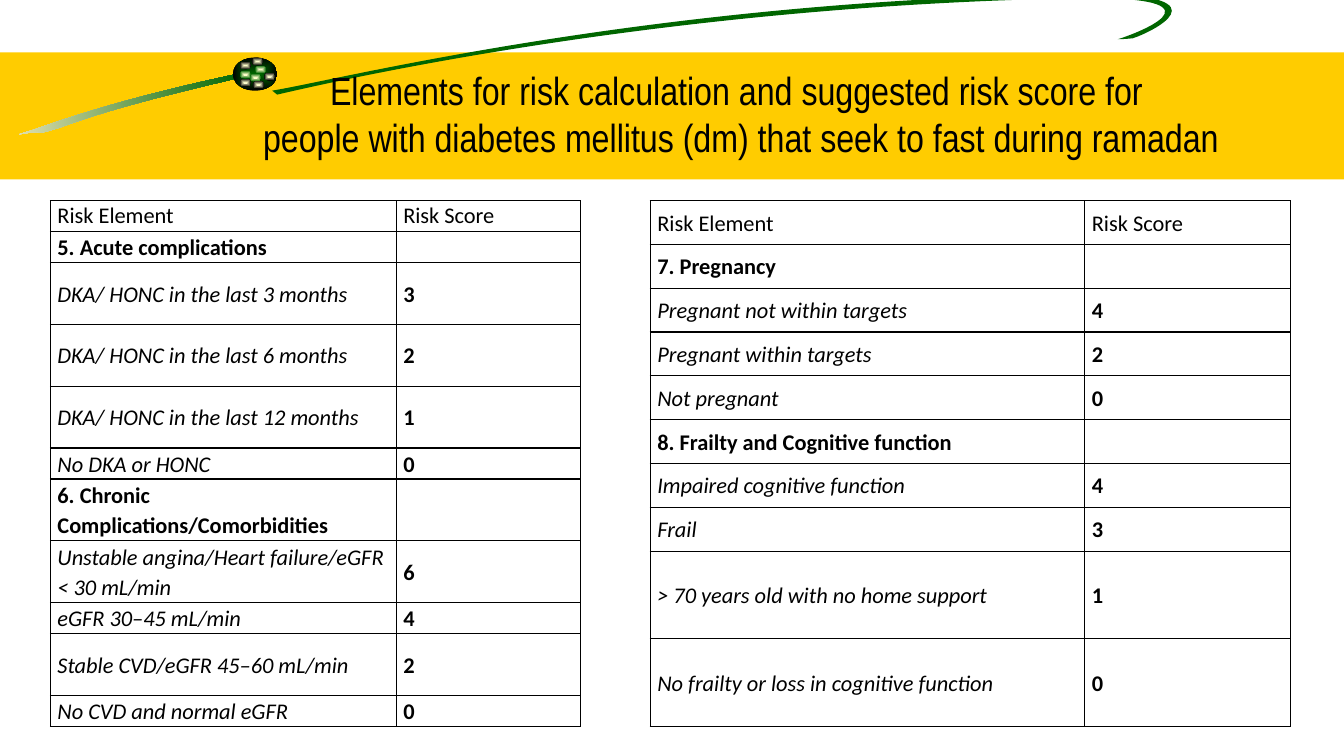
from math import cos, radians, sin

from lxml.etree import SubElement
from pptx import Presentation
from pptx.dml.color import RGBColor
from pptx.enum.shapes import MSO_SHAPE
from pptx.enum.text import MSO_ANCHOR, MSO_AUTO_SIZE, PP_ALIGN
from pptx.oxml import parse_xml
from pptx.oxml.ns import nsdecls, qn
from pptx.util import Inches, Pt

GREEN, BLACK, CREAM, WHITE = "006600", "000000", "FFFFCC", "FFFFFF"
TILT = 351.5
TABLE_TOP, TABLE_HEIGHT = 1.99, 5.22

TAIL = [(2.38, 0.73),
        (1.21, 0.98), (0.65, 1.18), (0.33, 1.29),
        (0, 1.39), (0.34, 1.29), (0.41, 1.32),
        (0.75, 1.24), (0.76, 1.15), (2.39, 0.77),
        (2.39, 0.77), (2.38, 0.73), (2.38, 0.73)]
SWOOSH = [(2.7, 0.9),
          (3.29, 0.81), (6.51, -0.02), (10.86, -0.06),
          (12.21, -0.05), (11.4, 0.33), (11.24, 0.38),
          (11.24, 0.38), (11.15, 0.39), (11.09, 0.39),
          (11.23, 0.35), (12.21, -0.01), (10.84, -0.02),
          (7.32, 0.03), (4.29, 0.58), (2.75, 0.94),
          (2.75, 0.94), (2.7, 0.9), (2.7, 0.9)]
SPOTS = [(2.53, 0.65, GREEN), (2.38, 0.61, BLACK), (2.38, 0.7, GREEN),
         (2.48, 0.73, GREEN), (2.62, 0.72, BLACK), (2.51, 0.8, BLACK),
         (2.38, 0.78, BLACK), (2.5, 0.57, BLACK)]

TITLE = ("Elements for risk calculation and suggested risk score for \v"
         "people with diabetes mellitus (dm) that seek to fast during ramadan")
HEADER = ("Risk Element", "Risk Score", 1)
COMPLICATIONS = [
    HEADER,
    ("5. Acute complications", "", 1),
    ("DKA/ HONC in the last 3 months", "3", 2),
    ("DKA/ HONC in the last 6 months", "2", 2),
    ("DKA/ HONC in the last 12 months", "1", 2),
    ("No DKA or HONC", "0", 1),
    ("6. Chronic Complications/Comorbidities", "", 2),
    ("Unstable angina/Heart failure/eGFR < 30 mL/min", "6", 2),
    ("eGFR 30–45 mL/min", "4", 1),
    ("Stable CVD/eGFR 45–60 mL/min", "2", 2),
    ("No CVD and normal eGFR", "0", 1)]
PREGNANCY_FRAILTY = [
    HEADER,
    ("7. Pregnancy", "", 1),
    ("Pregnant not within targets", "4", 1),
    ("Pregnant within targets", "2", 1),
    ("Not pregnant", "0", 1),
    ("8. Frailty and Cognitive function", "", 1),
    ("Impaired cognitive function", "4", 1),
    ("Frail", "3", 1),
    ("> 70 years old with no home support", "1", 2),
    ("No frailty or loss in cognitive function", "0", 2)]


def colour(value):
    return RGBColor.from_string(value)


def paint(shape, first, last=None, radial=False):
    shape.shadow.inherit = False
    shape.line.fill.background()
    if last is None:
        shape.fill.solid()
        shape.fill.fore_color.rgb = colour(first)
        return
    shape.fill.gradient()
    shape.fill.gradient_angle = 0
    for stop, value in zip(shape.fill.gradient_stops, (first, last)):
        stop.color.rgb = colour(value)
    if radial:
        linear = shape.element.spPr.find(".//" + qn("a:lin"))
        linear.getparent().replace(linear, parse_xml(
            f'<a:path {nsdecls("a")} path="shape"><a:fillToRect l="50000" '
            'r="50000" t="50000" b="50000"/></a:path>'))


def add_preset(page, kind, left, top, width, height, *fill, radial=False):
    shape = page.shapes.add_shape(kind, Inches(left), Inches(top),
                                  Inches(width), Inches(height))
    paint(shape, *fill, radial=radial)
    return shape


def add_side_panel(page):
    panel = add_preset(page, MSO_SHAPE.RECTANGLE, 0.99, 2.06, 1.62, 5.44, WHITE)
    solid = panel.element.spPr.find(qn("a:solidFill"))
    SubElement(solid[0], qn("a:alpha"), val="50000")


def level_point(point, center):
    across, down = point[0] - center[0], point[1] - center[1]
    angle = radians(360 - TILT)
    return (1000 * (center[0] + across * cos(angle) - down * sin(angle)),
            1000 * (center[1] + across * sin(angle) + down * cos(angle)))


def add_stroke(page, outline, center, *fill):
    start, *controls = [level_point(point, center) for point in outline]
    builder = page.shapes.build_freeform(*start, scale=Inches(0.001))
    builder.add_line_segments(controls, close=True)
    stroke = builder.convert_to_shape()
    stroke.rotation = TILT
    paint(stroke, *fill)
    lines = list(stroke.element.iter(qn("a:lnTo")))
    for index in range(0, len(lines), 3):
        curve = parse_xml(f'<a:cubicBezTo {nsdecls("a")}/>')
        lines[index].addprevious(curve)
        for line in lines[index:index + 3]:
            curve.append(line[0])
            line.getparent().remove(line)


def set_title(page, text):
    title = page.shapes.title
    title.left, title.top = Inches(1.68), Inches(0.5)
    title.width, title.height = Inches(11.33), Inches(1.25)
    frame = title.text_frame
    frame.text = text
    frame.auto_size = MSO_AUTO_SIZE.NONE
    frame.vertical_anchor = MSO_ANCHOR.MIDDLE
    para = frame.paragraphs[0]
    para.alignment = PP_ALIGN.CENTER
    style_font(para.font, "Arial Narrow", 28)
    title.element.getparent().append(title.element)


def style_font(font, name, size, bold=False, italic=False):
    font.name, font.size = name, Pt(size)
    font.bold, font.italic = bold, italic
    font.color.rgb = colour(BLACK)


def add_borders(cell):
    properties = cell._tc.get_or_add_tcPr()
    for position, side in enumerate(("lnL", "lnR", "lnT", "lnB")):
        properties.insert(position, parse_xml(
            f'<a:{side} {nsdecls("a")} w="12700"><a:solidFill>'
            f'<a:srgbClr val="{BLACK}"/></a:solidFill></a:{side}>'))


def fill_cell(cell, text, anchor, bold, italic):
    cell.text = text
    cell.fill.background()
    add_borders(cell)
    cell.vertical_anchor = anchor
    cell.margin_left = cell.margin_right = Inches(0.07)
    cell.margin_top = cell.margin_bottom = 0
    para = cell.text_frame.paragraphs[0]
    para.line_spacing = 1.07
    para.space_after = Pt(8)
    style_font(para.font, "Calibri", 16, bold, italic)
    if not text:
        SubElement(para._p, qn("a:endParaRPr"), sz="1600")


def add_risk_table(page, left, widths, rows, header_anchor):
    table = page.shapes.add_table(len(rows), 2, Inches(left), Inches(TABLE_TOP),
                                  Inches(sum(widths)), Inches(TABLE_HEIGHT)).table
    table.first_row = table.horz_banding = False
    for column, width in zip(table.columns, widths):
        column.width = Inches(width)
    unit = TABLE_HEIGHT / sum(row[2] for row in rows)
    for index, (element, score, units) in enumerate(rows):
        table.rows[index].height = Inches(unit * units)
        body = index > 0
        anchor = MSO_ANCHOR.MIDDLE if body else header_anchor
        fill_cell(table.cell(index, 0), element, anchor,
                  bold=body and not score, italic=body and bool(score))
        fill_cell(table.cell(index, 1), score, anchor, bold=body, italic=False)


def main():
    deck = Presentation()
    deck.slide_width, deck.slide_height = Inches(13.33), Inches(7.5)
    page = deck.slides.add_slide(deck.slide_layouts[5])
    add_preset(page, MSO_SHAPE.RECTANGLE, 0, 0.52, 13.33, 1.26, "FFCC00")
    add_stroke(page, TAIL, (1.2, 1.06), "F5EBC1", GREEN)
    add_stroke(page, SWOOSH, (7.45, 0.4), GREEN)
    add_preset(page, MSO_SHAPE.OVAL, 2.31, 0.57, 0.44, 0.33, GREEN, BLACK, radial=True)
    for left, top, edge in SPOTS:
        add_preset(page, MSO_SHAPE.OVAL, left, top, 0.11, 0.08, CREAM, edge, radial=True)
    add_side_panel(page)
    set_title(page, TITLE)
    add_risk_table(page, 0.5, (3.43, 1.83), COMPLICATIONS, MSO_ANCHOR.TOP)
    add_risk_table(page, 6.45, (4.31, 2.04), PREGNANCY_FRAILTY, MSO_ANCHOR.MIDDLE)
    deck.save("out.pptx")


if __name__ == "__main__":
    main()
